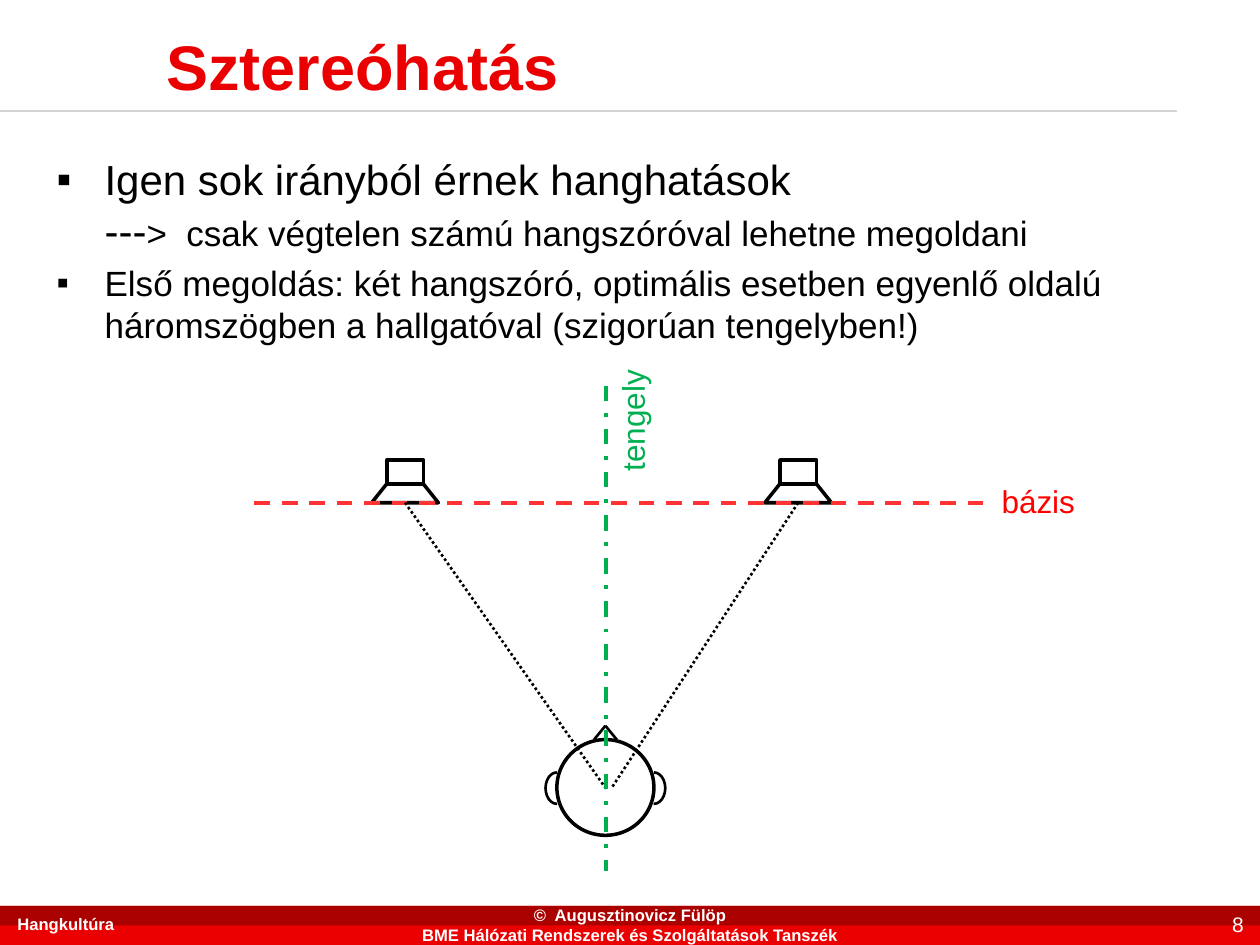
from lxml import etree
from pptx import Presentation
from pptx.dml.color import RGBColor
from pptx.enum.dml import MSO_LINE
from pptx.enum.shapes import MSO_CONNECTOR, MSO_SHAPE
from pptx.enum.text import MSO_ANCHOR, MSO_AUTO_SIZE, PP_ALIGN
from pptx.oxml.ns import qn
from pptx.util import Inches, Pt

FONT = "Arial"
BLACK = RGBColor(0, 0, 0)
WHITE = RGBColor(255, 255, 255)
RED = RGBColor(0xEA, 0, 0)
DARK_RED = RGBColor(0xAA, 0, 0)
BASE_RED = RGBColor(0xFF, 0x33, 0x33)
LABEL_RED = RGBColor(0xFF, 0, 0)
GREEN = RGBColor(0, 0xB0, 0x50)
GREY = RGBColor(0xD4, 0xD4, 0xD4)


def place(shape, x, y, w, h):
    shape.left, shape.top = Inches(x), Inches(y)
    shape.width, shape.height = Inches(w), Inches(h)


def style_font(font, size, color, bold=False):
    font.name, font.size, font.bold = FONT, Pt(size), bold
    font.color.rgb = color


def style_shape(shape, fill=None, width=None):
    """Give a shape a plain fill and a black outline, or neither."""
    shape.shadow.inherit = False
    if fill is None:
        shape.fill.background()
    else:
        shape.fill.solid()
        shape.fill.fore_color.rgb = fill
    if width is None:
        shape.line.fill.background()
    else:
        shape.line.color.rgb = BLACK
        shape.line.width = Pt(width)


def add_shape(shapes, kind, x, y, w, h, fill=None, width=None):
    shape = shapes.add_shape(kind, Inches(x), Inches(y), Inches(w), Inches(h))
    style_shape(shape, fill, width)
    return shape


def add_line(shapes, x1, y1, x2, y2, color=BLACK, width=1.5, dash=None):
    line = shapes.add_connector(MSO_CONNECTOR.STRAIGHT, Inches(x1), Inches(y1),
                                Inches(x2), Inches(y2))
    line.line.color.rgb = color
    line.line.width = Pt(width)
    if dash is not None:
        line.line.dash_style = dash
    etree.SubElement(line._element.spPr, qn("a:effectLst"))


def add_text(s, text, x, y, w, h, size, color, bold=False,
             align=PP_ALIGN.LEFT, anchor=MSO_ANCHOR.TOP):
    box = s.shapes.add_textbox(Inches(x), Inches(y), Inches(w), Inches(h))
    tf = box.text_frame
    tf.word_wrap = True
    tf.vertical_anchor = anchor
    tf.text = text
    p = tf.paragraphs[0]
    p.alignment = align
    for r in p.runs:
        style_font(r.font, size, color, bold)
    return box


def add_title(s, x, y, w, h):
    title = s.shapes.title
    place(title, x, y, w, h)
    tf = title.text_frame
    tf.text = "Sztereóhatás"
    tf.vertical_anchor = MSO_ANCHOR.MIDDLE
    p = tf.paragraphs[0]
    p.alignment = PP_ALIGN.LEFT
    style_font(p.runs[0].font, 36, RED, True)
    add_line(s.shapes, 0, 0.88, 9.34, 0.88, GREY)


def set_bullet(p):
    pPr = p._p.get_or_add_pPr()
    pPr.set("marL", str(Inches(0.38)))
    pPr.set("indent", str(-Inches(0.38)))
    color = etree.SubElement(pPr, qn("a:buClr"))
    etree.SubElement(color, qn("a:srgbClr"), val=str(BLACK))
    etree.SubElement(pPr, qn("a:buFont"), typeface=FONT)
    etree.SubElement(pPr, qn("a:buChar"), char="▪")


def add_body(s, x, y, w, h):
    body = s.placeholders[1]
    place(body, x, y, w, h)
    tf = body.text_frame
    tf.auto_size = MSO_AUTO_SIZE.NONE
    paragraphs = [
        [("Igen sok irányból érnek hanghatások\v---", 24),
         (">  csak végtelen számú hangszóróval lehetne megoldani", 20)],
        [("Első megoldás: két hangszóró, optimális esetben egyenlő oldalú "
          "háromszögben a hallgatóval (szigorúan tengelyben!)", 20)],
    ]
    for i, parts in enumerate(paragraphs):
        p = tf.add_paragraph() if i else tf.paragraphs[0]
        set_bullet(p)
        for text, size in parts:
            first_new = len(p.runs)
            if "\v" in text:
                p.text = text
            else:
                p.add_run().text = text
            for r in p.runs[first_new:]:
                style_font(r.font, size, BLACK)


def add_footer(s, x, y, w, h):
    add_shape(s.shapes, MSO_SHAPE.RECTANGLE, x, y, w, h, RED)
    add_shape(s.shapes, MSO_SHAPE.RECTANGLE, x, y, w, h / 2, DARK_RED)
    middle = MSO_ANCHOR.MIDDLE
    text_y = y - 0.01
    add_text(s, "Hangkultúra", x + 0.04, text_y, 2.94, h, 9.5, WHITE, True, anchor=middle)
    add_text(s, "8", x + w - 0.75, text_y, 0.72, h, 12, WHITE,
             align=PP_ALIGN.RIGHT, anchor=middle)
    credit = add_text(
        s, "©  Augusztinovicz Fülöp\vBME Hálózati Rendszerek és Szolgáltatások Tanszék",
        x + 3.1, text_y, w - 6.2, h + 0.01, 9.5, WHITE, True, PP_ALIGN.CENTER, middle)
    tf = credit.text_frame
    tf.margin_left = tf.margin_right = tf.margin_top = tf.margin_bottom = 0


def add_loudspeaker(s, x, y, w, h):
    shapes = s.shapes.add_group_shape().shapes
    inset, neck = 0.12, y + 0.19
    add_shape(shapes, MSO_SHAPE.RECTANGLE, x + inset, y, w - 2 * inset, 0.19, WHITE, 2)
    corners = [(x + inset, neck), (x, y + h), (x + w, y + h), (x + w - inset, neck)]
    points = [(Inches(px), Inches(py)) for px, py in corners]
    horn = shapes.build_freeform(*points[0])
    horn.add_line_segments(points[1:], close=False)
    style_shape(horn.convert_to_shape(), width=2)


def add_listener(s, x, y, w, h):
    """Draw a head from above, with its nose at the top and an ear on each side."""
    shapes = s.shapes.add_group_shape().shapes
    center, nose = x + w / 2, 0.11
    head_w = w - 0.18
    add_shape(shapes, MSO_SHAPE.OVAL, center - head_w / 2, y + nose, head_w, h - nose, width=2)
    for dx in (-0.09, 0.09):
        add_line(shapes, center + dx, y + nose, center, y)
    for ear_x, flip in ((x, True), (x + w - 0.18, False)):
        ear = add_shape(shapes, MSO_SHAPE.ARC, ear_x, y + 0.37, 0.18, 0.25, width=1.5)
        ear.adjustments[0], ear.adjustments[1] = 162, 54.45
        if flip:
            ear._element.spPr.xfrm.set("flipH", "1")


def add_stereo_diagram(s, x, y, w, h):
    """Place two loudspeakers on the base line and the listener on the axis."""
    axis, base = x + 2.79, y + 0.93
    speaker_w, speaker_h = 0.53, 0.34
    speakers = (x + 0.93, x + 4.05)
    add_listener(s, axis - 0.48, y + 2.7, 0.95, 0.87)
    for left in speakers:
        add_loudspeaker(s, left, base - speaker_h, speaker_w, speaker_h)
    add_line(s.shapes, x, base, x + w, base, BASE_RED, 2.25, MSO_LINE.DASH)
    for left, ear in zip(speakers, (axis, axis + 0.04)):
        add_line(s.shapes, left + speaker_w / 2, base, ear, y + 3.2,
                 dash=MSO_LINE.ROUND_DOT)
    add_text(s, "bázis", x + w, base - 0.21, 0.99, 0.4, 18, LABEL_RED)
    add_line(s.shapes, axis, y, axis, y + h, GREEN, 2.25, MSO_LINE.DASH_DOT)
    label = add_text(s, "tengely", axis - 0.31, y + 0.06, 1.04, 0.4, 18, GREEN)
    label.rotation = 270


def main():
    prs = Presentation()
    prs.slide_width, prs.slide_height = Inches(10), Inches(7.5)
    s = prs.slides.add_slide(prs.slide_layouts[1])
    add_title(s, 1.22, 0.08, 8.74, 0.87)
    add_body(s, 0.35, 1.17, 9.4, 5.87)
    add_footer(s, 0, 7.19, 10, 0.31)
    add_stereo_diagram(s, 2.02, 3.06, 5.83, 3.85)
    prs.save("out.pptx")


if __name__ == "__main__":
    main()
